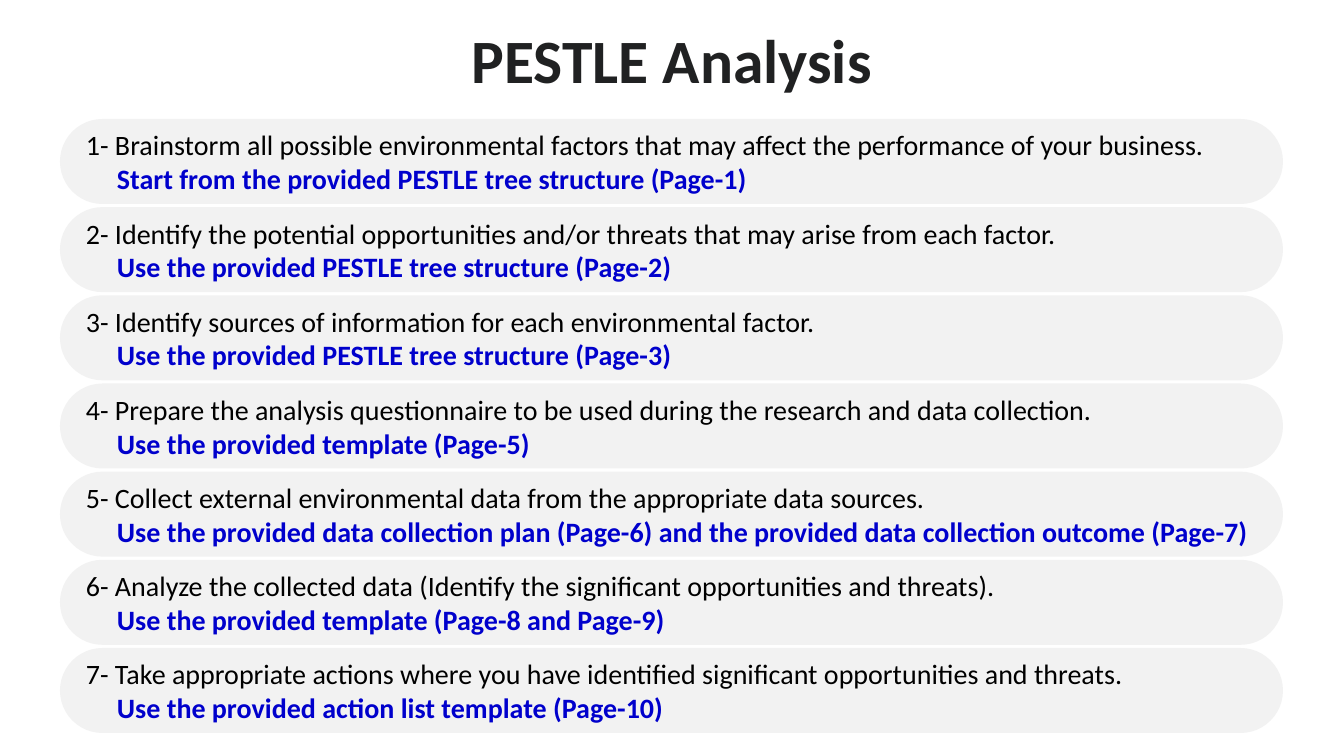
"""Build the PESTLE Analysis steps slide."""
from pptx import Presentation
from pptx.dml.color import RGBColor
from pptx.enum.shapes import MSO_SHAPE
from pptx.enum.text import MSO_ANCHOR, MSO_AUTO_SIZE, PP_ALIGN
from pptx.util import Emu, Pt

TITLE = "PESTLE Analysis"
STEPS = [
    ("Brainstorm all possible environmental factors that may affect the performance of your business.",
     "Start from the provided PESTLE tree structure (Page-1)"),
    ("Identify the potential opportunities and/or threats that may arise from each factor.",
     "Use the provided PESTLE tree structure (Page-2)"),
    ("Identify sources of information for each environmental factor.",
     "Use the provided PESTLE tree structure (Page-3)"),
    ("Prepare the analysis questionnaire to be used during the research and data collection.",
     "Use the provided template (Page-5)"),
    ("Collect external environmental data from the appropriate data sources.",
     "Use the provided data collection plan (Page-6) and the provided data collection outcome (Page-7)"),
    ("Analyze the collected data (Identify the significant opportunities and threats).",
     "Use the provided template (Page-8 and Page-9)"),
    ("Take appropriate actions where you have identified significant opportunities and threats.",
     "Use the provided action list template (Page-10)"),
]
COLORS = {"title": "202122", "bar": "F2F2F2", "step": "000000", "hint": "0000CC"}
FONT = "Calibri"
WIDE, HIGH = 1344, 756
SCALE = 12192000 / WIDE
LEFT, BAR_W, BAR_H = 60, 1223, 85
FIRST, LAST = 119, 648
PAD_X, PAD_Y, TEXT_W = 16, 3, 1194
INDENT = 31


def px(n):
    return Emu(round(n * SCALE))


def box(*sides):
    return [px(n) for n in sides]


def style(para, size, color, bold=False):
    for run in para.runs:
        font = run.font
        font.name, font.size, font.bold = FONT, Pt(size), bold
        font.color.rgb = RGBColor.from_string(COLORS[color])


def add_title(slide):
    title = slide.shapes.title
    title.left, title.top, title.width, title.height = box(336, 16, 672, 85)
    frame = title.text_frame
    frame.text = TITLE
    frame.auto_size = MSO_AUTO_SIZE.NONE
    frame.vertical_anchor = MSO_ANCHOR.MIDDLE
    frame.paragraphs[0].alignment = PP_ALIGN.CENTER
    style(frame.paragraphs[0], 44, "title", True)


def add_step(slide, num, step, hint, top):
    group = slide.shapes.add_group_shape().shapes
    bar = group.add_shape(MSO_SHAPE.ROUNDED_RECTANGLE, *box(LEFT, top, BAR_W, BAR_H))
    bar.adjustments[0] = 0.5
    bar.shadow.inherit = False
    bar.fill.solid()
    bar.fill.fore_color.rgb = RGBColor.from_string(COLORS["bar"])
    bar.line.fill.background()

    label = group.add_textbox(*box(LEFT + PAD_X, top + PAD_Y, TEXT_W, BAR_H - 2 * PAD_Y))
    frame = label.text_frame
    frame.word_wrap = True
    frame.vertical_anchor = MSO_ANCHOR.MIDDLE
    frame.text = f"{num}- {step}\n{hint}"
    head, tail = frame.paragraphs
    style(head, 20, "step")
    style(tail, 20, "hint", True)
    tail._p.get_or_add_pPr().set("marL", str(px(INDENT)))


def main():
    deck = Presentation()
    deck.slide_width, deck.slide_height = box(WIDE, HIGH)
    slide = deck.slides.add_slide(deck.slide_layouts[5])
    add_title(slide)
    pitch = (LAST - FIRST) / (len(STEPS) - 1)
    for i, (step, hint) in enumerate(STEPS):
        add_step(slide, i + 1, step, hint, FIRST + i * pitch)
    deck.save("out.pptx")


if __name__ == "__main__":
    main()
